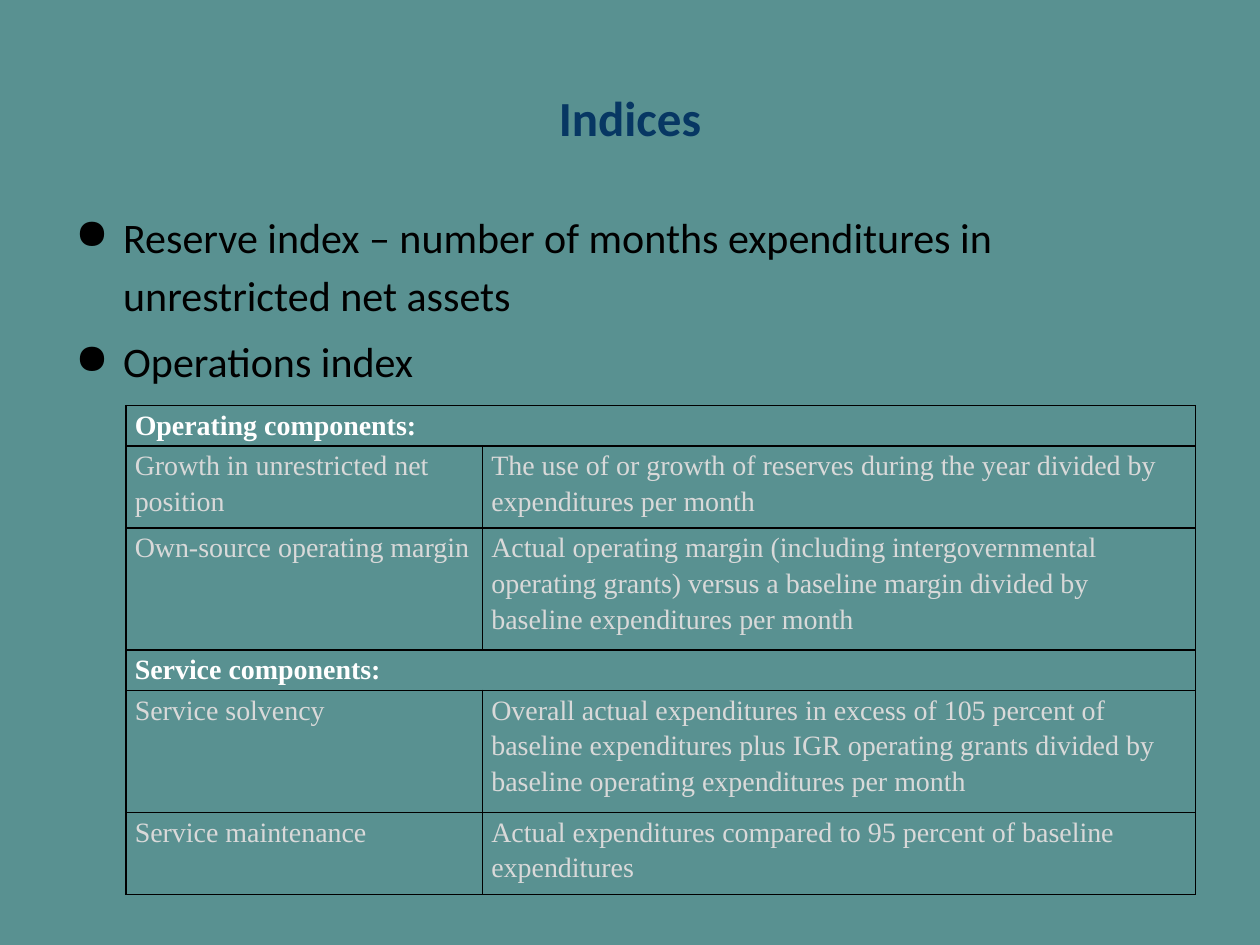
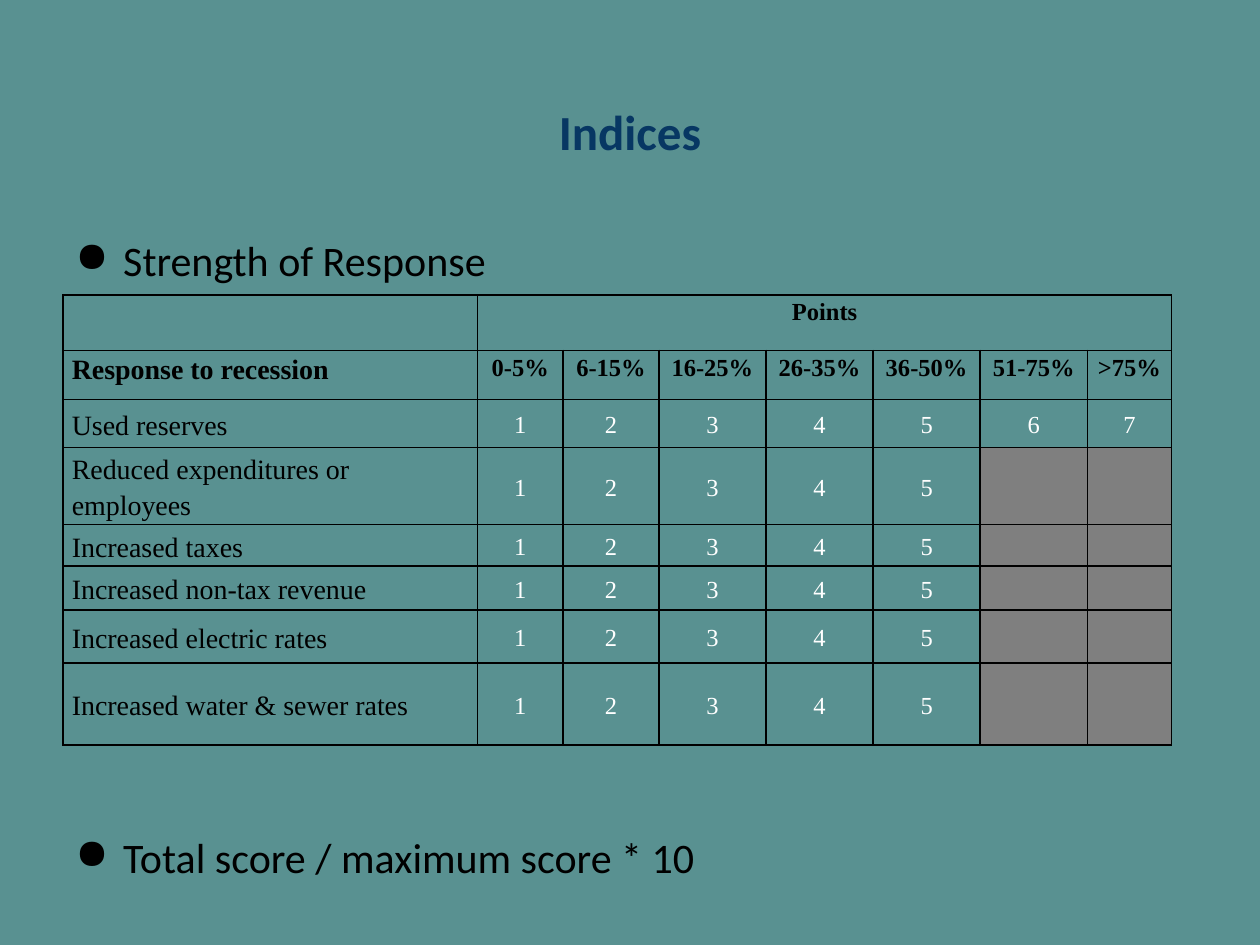
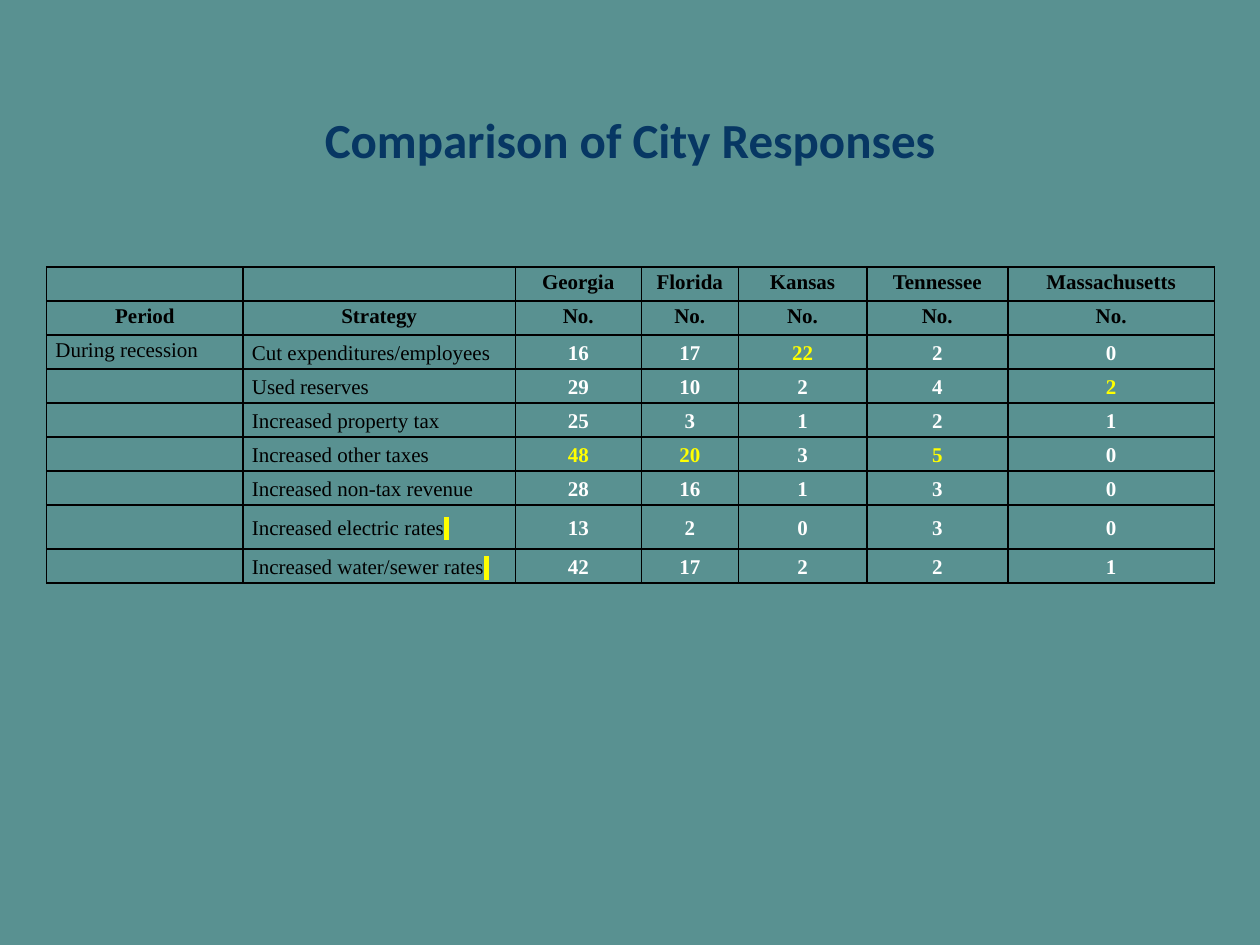
from lxml.etree import SubElement
from pptx import Presentation
from pptx.dml.color import RGBColor
from pptx.enum.text import MSO_ANCHOR as Anchor, PP_ALIGN as Align
from pptx.oxml.ns import qn
from pptx.util import Inches, Pt

TEAL = RGBColor(0x59, 0x91, 0x91)
NAVY = RGBColor(0x07, 0x37, 0x63)
BLACK = RGBColor(0x00, 0x00, 0x00)
WHITE = RGBColor(0xFF, 0xFF, 0xFF)
LIGHT_GRAY = RGBColor(0xD9, 0xD9, 0xD9)
DARK_GRAY = RGBColor(0x7F, 0x7F, 0x7F)
YELLOW = RGBColor(0xFF, 0xFF, 0x00)

HEADING_FONT = "Calibri"
TABLE_FONT = "Times New Roman"
LINE_SPACING = 1.15


def add_color(parent, tag, color):
    element = SubElement(parent, qn(tag))
    SubElement(element, qn("a:srgbClr"), val=str(color))
    return element


class Deck:
    def __init__(self):
        self.presentation = Presentation()
        self.presentation.slide_width = Inches(10)
        self.presentation.slide_height = Inches(7.5)
        self.slide = None

    def add_slide(self, title, title_top):
        self.slide = self.presentation.slides.add_slide(self.presentation.slide_layouts[6])
        background = self.slide.background.fill
        background.solid()
        background.fore_color.rgb = TEAL
        text_frame = self.add_text_frame(title_top, 0.81)
        text_frame.vertical_anchor = Anchor.MIDDLE
        text_frame.text = title
        paragraph = text_frame.paragraphs[0]
        paragraph.alignment = Align.CENTER
        self.format_run(paragraph.runs[0], HEADING_FONT, 28, NAVY, True)

    def add_text_frame(self, top, height):
        shape = self.slide.shapes.add_textbox(Inches(0.5), Inches(top), Inches(9), Inches(height))
        shape.text_frame.word_wrap = True
        return shape.text_frame

    def format_run(self, run, font_name, size, color, bold=False):
        run.font.size = Pt(size)
        run.font.bold = bold
        run.font.color.rgb = color
        run.font.name = font_name

    def add_bullets(self, top, height, texts, gap=4.8):
        text_frame = self.add_text_frame(top, height)
        text_frame.text = "\n".join(texts)
        for index, paragraph in enumerate(text_frame.paragraphs):
            paragraph.line_spacing = LINE_SPACING
            if index:
                paragraph.space_before = Pt(gap)
            self.format_run(paragraph.runs[0], HEADING_FONT, 24, BLACK)
            properties = paragraph._p.get_or_add_pPr()
            properties.set("marL", str(Inches(0.38)))
            properties.set("indent", str(-Inches(0.38)))
            add_color(properties, "a:buClr", BLACK)
            SubElement(properties, qn("a:buChar"), char="●")

    def add_table(self, left, top, widths, heights):
        table = self.slide.shapes.add_table(
            len(heights), len(widths), Inches(left), Inches(top),
            Inches(sum(widths)), Inches(sum(heights))).table
        table.first_row = table.horz_banding = False
        for column, width in zip(table.columns, widths):
            column.width = Inches(width)
        for row, height in zip(table.rows, heights):
            row.height = Inches(height)
        for cell in table.iter_cells():
            cell.margin_left = cell.margin_right = Inches(0.07)
            cell.margin_top = cell.margin_bottom = 0
            properties = cell._tc.get_or_add_tcPr()
            for side in "LRTB":
                line = SubElement(properties, qn(f"a:ln{side}"), w=str(Pt(1)))
                add_color(line, "a:solidFill", BLACK)
            cell.fill.background()
        return table

    def write_cell(self, cell, text, size, color=BLACK, bold=False,
                   alignment=Align.LEFT, anchor=Anchor.TOP):
        cell.vertical_anchor = anchor
        cell.text_frame.text = text
        paragraph = cell.text_frame.paragraphs[0]
        paragraph.alignment = alignment
        paragraph.line_spacing = LINE_SPACING
        for run in paragraph.runs:
            self.format_run(run, TABLE_FONT, size, color, bold)
        if not text:
            SubElement(paragraph._p, qn("a:endParaRPr"), sz=str(size * 100))

    def shade_cell(self, cell, color):
        cell.fill.solid()
        cell.fill.fore_color.rgb = color

    def add_highlighted_space(self, cell, size):
        run = cell.text_frame.paragraphs[0].add_run()
        run.text = " "
        self.format_run(run, TABLE_FONT, size, BLACK)
        properties = run._r.get_or_add_rPr()
        highlight = add_color(properties, "a:highlight", YELLOW)
        properties.find(qn("a:solidFill")).addnext(highlight)


def add_components_slide(deck):
    deck.add_slide("Indices", 0.52)
    deck.add_bullets(1.57, 5.52, [
        "Reserve index – number of months expenditures in unrestricted net assets",
        "Operations index",
    ])
    components = [
        ("Operating components:",),
        ("Growth in unrestricted net position",
         "The use of or growth of reserves during the year divided by expenditures per month"),
        ("Own-source operating margin",
         "Actual operating margin (including intergovernmental operating grants) versus a "
         "baseline margin divided by baseline expenditures per month"),
        ("Service components:",),
        ("Service solvency",
         "Overall actual expenditures in excess of 105 percent of baseline expenditures plus "
         "IGR operating grants divided by baseline operating expenditures per month"),
        ("Service maintenance",
         "Actual expenditures compared to 95 percent of baseline expenditures"),
    ]
    table = deck.add_table(1, 3.22, [2.83, 5.66], [0.32, 0.65, 0.97, 0.32, 0.97, 0.65])
    for row, texts in enumerate(components):
        is_heading = len(texts) == 1
        if is_heading:
            table.cell(row, 0).merge(table.cell(row, 1))
        for column, text in enumerate(texts):
            deck.write_cell(table.cell(row, column), text, 16,
                            WHITE if is_heading else LIGHT_GRAY, is_heading)


def add_points_slide(deck):
    deck.add_slide("Indices", 0.63)
    deck.add_bullets(1.75, 4.95, ["Strength of Response", "Total score / maximum score * 10"],
                     gap=308)
    ranges = ["0-5%", "6-15%", "16-25%", "26-35%", "36-50%", "51-75%", ">75%"]
    responses = [
        ("Used reserves", 7),
        ("Reduced expenditures or employees", 5),
        ("Increased taxes", 5),
        ("Increased non-tax revenue", 5),
        ("Increased electric rates", 5),
        ("Increased water & sewer rates", 5),
    ]
    table = deck.add_table(0.5, 2.34, [3.29, 0.68, 0.76] + [0.85] * 4 + [0.67],
                           [0.44, 0.39, 0.38, 0.35, 0.33, 0.35, 0.42, 0.65])
    table.cell(0, 1).merge(table.cell(0, len(ranges)))
    deck.write_cell(table.cell(0, 0), "", 14)
    deck.write_cell(table.cell(0, 1), "Points", 14, bold=True, alignment=Align.CENTER)
    deck.write_cell(table.cell(1, 0), "Response to recession", 16, bold=True)
    for column, text in enumerate(ranges, 1):
        deck.write_cell(table.cell(1, column), text, 14, bold=True, alignment=Align.CENTER)
    for row, (response, maximum) in enumerate(responses, 2):
        deck.write_cell(table.cell(row, 0), response, 16, anchor=Anchor.MIDDLE)
        for points in range(1, len(ranges) + 1):
            cell = table.cell(row, points)
            allowed = points <= maximum
            deck.write_cell(cell, str(points) if allowed else "", 14, WHITE,
                            alignment=Align.CENTER, anchor=Anchor.MIDDLE)
            if not allowed:
                deck.shade_cell(cell, DARK_GRAY)


def add_comparison_slide(deck):
    deck.add_slide("Comparison of City Responses", 0.7)
    states = ["Georgia", "Florida", "Kansas", "Tennessee", "Massachusetts"]
    strategies = [
        ("Cut expenditures/employees", [16, 17, 22, 2, 0]),
        ("Used reserves", [29, 10, 2, 4, 2]),
        ("Increased property tax", [25, 3, 1, 2, 1]),
        ("Increased other taxes", [48, 20, 3, 5, 0]),
        ("Increased non-tax revenue", [28, 16, 1, 3, 0]),
        ("Increased electric rates", [13, 2, 0, 3, 0]),
        ("Increased water/sewer rates", [42, 17, 2, 2, 1]),
    ]
    highest = [max(counts) for counts in zip(*(counts for _, counts in strategies))]
    table = deck.add_table(0.37, 2.12, [1.56, 2.16, 1, 0.77, 1.02, 1.12, 1.64],
                           [0.27] * 7 + [0.35, 0.27])
    headings = [["", ""] + states, ["Period", "Strategy"] + ["No."] * len(states)]
    for row, texts in enumerate(headings):
        for column, text in enumerate(texts):
            deck.write_cell(table.cell(row, column), text, 12, bold=True, alignment=Align.CENTER)
    for row, (strategy, counts) in enumerate(strategies, len(headings)):
        period = "During recession" if row == len(headings) else ""
        deck.write_cell(table.cell(row, 0), period, 12)
        deck.write_cell(table.cell(row, 1), strategy, 12, anchor=Anchor.MIDDLE)
        if strategy.endswith("rates"):
            deck.add_highlighted_space(table.cell(row, 1), 12)
        for column, (count, top_count) in enumerate(zip(counts, highest), 2):
            deck.write_cell(table.cell(row, column), str(count), 12,
                            YELLOW if count == top_count else WHITE, True,
                            Align.CENTER, Anchor.MIDDLE)


def main():
    deck = Deck()
    add_components_slide(deck)
    add_points_slide(deck)
    add_comparison_slide(deck)
    deck.presentation.save("out.pptx")


if __name__ == "__main__":
    main()
